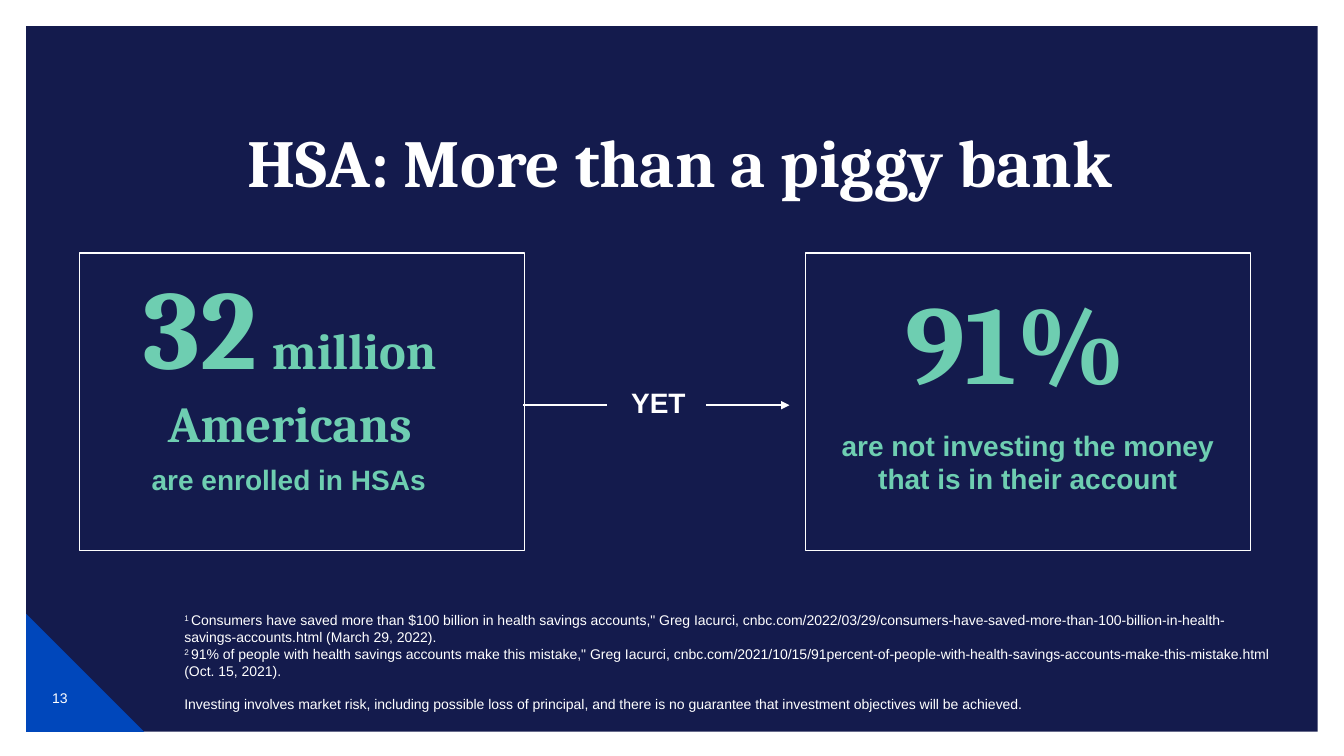
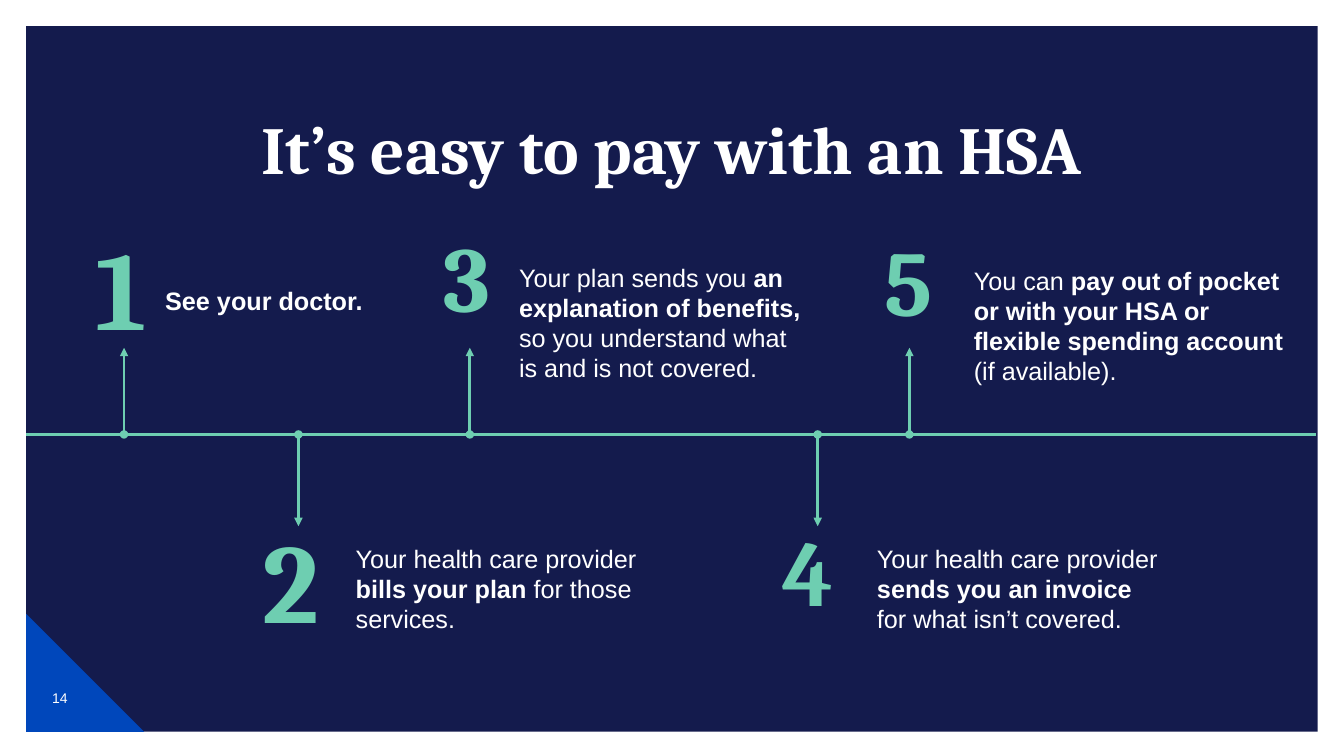
from lxml import etree
from pptx import Presentation
from pptx.dml.color import RGBColor
from pptx.enum.shapes import MSO_CONNECTOR, MSO_SHAPE
from pptx.enum.text import MSO_ANCHOR, MSO_AUTO_SIZE, PP_ALIGN
from pptx.oxml.ns import qn
from pptx.util import Emu, Pt

RECTANGLE, TRIANGLE = MSO_SHAPE.RECTANGLE, MSO_SHAPE.RIGHT_TRIANGLE
STRAIGHT = MSO_CONNECTOR.STRAIGHT
LEFT, CENTER = PP_ALIGN.LEFT, PP_ALIGN.CENTER
TOP, MIDDLE = MSO_ANCHOR.TOP, MSO_ANCHOR.MIDDLE
NO_AUTOFIT = MSO_AUTO_SIZE.NONE

NAVY = RGBColor(0x14, 0x1B, 0x4D)
BLUE = RGBColor(0x00, 0x47, 0xBB)
MINT = RGBColor(0x6E, 0xCE, 0xB1)
WHITE = RGBColor(0xFF, 0xFF, 0xFF)

EMU_PER_PX = 9144  # 100 px to the inch
TITLE_ONLY = 5


def text_format(name, size, color, bold=False):
    return {"name": name, "size": Pt(size), "bold": bold, "color": color}


TITLE = text_format("Cambria", 48, WHITE, True)
FIGURE = text_format("Cambria", 80, MINT, True)
UNIT = text_format("Cambria", 36, MINT, True)
CAPTION = text_format("Arial", 20, MINT, True)
LINK_WORD = text_format("Arial", 20, WHITE, True)
BODY = text_format("Arial", 18, WHITE)
STRONG = text_format("Arial", 18, WHITE, True)
SMALL = text_format("Arial", 10, WHITE)
NOTE_MARK = {**SMALL, "baseline": "30000"}

NOTES = [
    ("1 ", 'Consumers have saved more than $100 billion in health savings accounts," Greg Iacurci, '
     "cnbc.com/2022/03/29/consumers-have-saved-more-than-100-billion-in-health-savings-accounts.html "
     "(March 29, 2022)."),
    ("2 ", '91% of people with health savings accounts make this mistake," Greg Iacurci, '
     "cnbc.com/2021/10/15/91percent-of-people-with-health-savings-accounts-make-this-mistake.html "
     "(Oct. 15, 2021)."),
]
RISK_NOTE = ("Investing involves market risk, including possible loss of principal, and there is "
             "no guarantee that investment objectives will be achieved.")

AXIS_Y, UPPER_Y, LOWER_Y = 431, 345, 522
# number size, number left and top, marker x, arrow end, text box, text spans
STEPS = [
    (80, (85, 227), 123, UPPER_Y, (154, 278, 300, 40), [("See your doctor.", STRONG)]),
    (80, (251, 518), 296, LOWER_Y, (343, 534, 310, 101),
     [("Your health care provider ", BODY), ("bills your plan ", STRONG),
      ("for those services.", BODY)]),
    (66, (430, 226), 466, UPPER_Y, (505, 255, 310, 131),
     [("Your plan sends you ", BODY), ("an explanation of benefits,", STRONG), ("\n", BODY),
      ("so you understand what is and is not covered.", BODY)]),
    (66, (766, 518), 811, LOWER_Y, (860, 534, 310, 101),
     [("Your health care provider ", BODY), ("sends you an invoice", STRONG), ("\n", BODY),
      ("for what isn’t covered.", BODY)]),
    (66, (867, 230), 902, UPPER_Y, (956, 258, 329, 131),
     [("You can ", BODY),
      ("pay out of pocket or with your HSA or flexible spending account", STRONG),
      (" (if available).", BODY)]),
]


def px(*lengths):
    return [Emu(length * EMU_PER_PX) for length in lengths]


def add_spans(para, spans):
    for text, style in spans:
        if text == "\n":
            para.add_line_break()
            continue
        run = para.add_run()
        run.text = text
        for key, value in style.items():
            if key == "color":
                run.font.color.rgb = value
            elif key == "baseline":
                run._r.get_or_add_rPr().set(key, value)
            else:
                setattr(run.font, key, value)


def add_text(slide, place, paragraphs, align=LEFT, anchor=TOP, spacing=1.0):
    frame = slide.shapes.add_textbox(*px(*place)).text_frame
    frame.word_wrap = True
    frame.vertical_anchor = anchor
    for index, spans in enumerate(paragraphs):
        para = frame.add_paragraph() if index else frame.paragraphs[0]
        para.alignment = align
        para.line_spacing = spacing
        add_spans(para, spans)
    return frame


def add_shape(slide, kind, place, fill=None, outline=None):
    shape = slide.shapes.add_shape(kind, *px(*place))
    shape.shadow.inherit = False
    if fill is None:
        shape.fill.background()
    else:
        shape.fill.solid()
        shape.fill.fore_color.rgb = fill
    if outline is None:
        shape.line.fill.background()
    else:
        shape.line.color.rgb = outline
        shape.line.width = Pt(1)
    return shape


def add_line(slide, start, end, color, width, head=None, tail=None):
    connector = slide.shapes.add_connector(STRAIGHT, *px(*start, *end))
    connector.line.color.rgb = color
    connector.line.width = Pt(width)
    properties = connector.element.spPr
    outline = properties.find(qn("a:ln"))
    for tag, kind in (("a:headEnd", head), ("a:tailEnd", tail)):
        if kind:
            etree.SubElement(outline, qn(tag)).set("type", kind)
    etree.SubElement(properties, qn("a:effectLst"))


def move_backdrop_to_layout(slide):
    """Draw the shared panel and corner, then hand them to the layout."""
    panel = add_shape(slide, RECTANGLE, (26, 26, 1281, 700), NAVY)
    corner = add_shape(slide, TRIANGLE, (26, 609, 117, 117), BLUE)
    tree = slide.slide_layout.placeholders[0].element.getparent()
    for index, shape in enumerate((panel, corner), start=2):
        tree.insert(index, shape.element)


def add_slide(deck, number, title, place):
    slide = deck.slides.add_slide(deck.slide_layouts[TITLE_ONLY])
    heading = slide.shapes.title
    heading.left, heading.top, heading.width, heading.height = px(*place)
    frame = heading.text_frame
    for key, value in {"margin_left": 0, "margin_right": 0, "word_wrap": True,
                       "vertical_anchor": TOP, "auto_size": NO_AUTOFIT}.items():
        setattr(frame, key, value)
    para = frame.paragraphs[0]
    para.alignment = CENTER
    para.line_spacing = 0.9
    add_spans(para, [(title, TITLE)])
    add_text(slide, (32, 663, 55, 58), [[(str(number), SMALL)]], CENTER, MIDDLE)
    return slide


def fill_piggy_bank(slide):
    # Framed figures
    for left in (79, 799):
        add_shape(slide, RECTANGLE, (left, 251, 441, 295), outline=WHITE)
    gap = (" ", {**UNIT, "size": Pt(48)})
    for place, spans in (
        ((79, 251, 417, 205), [("32", FIGURE), gap, ("million Americans", UNIT)]),
        ((78, 454, 417, 44), [("are enrolled in HSAs", CAPTION)]),
        ((603, 378, 100, 44), [("YET", LINK_WORD)]),
        ((799, 265, 417, 145), [("91%", FIGURE)]),
        ((811, 420, 417, 77), [("are not investing the money that is in their account", CAPTION)]),
    ):
        add_text(slide, place, [spans], CENTER)

    # Link between the frames
    add_line(slide, (519, 402), (602, 402), WHITE, 1)
    add_line(slide, (700, 402), (783, 402), WHITE, 1, tail="triangle")

    # Footnotes
    notes = [[(mark, NOTE_MARK), (text, SMALL)] for mark, text in NOTES]
    frame = add_text(slide, (173, 602, 1100, 111), notes + [[(RISK_NOTE, SMALL)]])
    frame.paragraphs[-1].space_before = Pt(12)


def fill_timeline(slide):
    add_line(slide, (26, AXIS_Y), (1305, AXIS_Y), MINT, 2)
    for number, (size, corner, x, arrow_y, place, spans) in enumerate(STEPS, start=1):
        style = {**FIGURE, "size": Pt(size)}
        add_text(slide, (*corner, 131, 104), [[(str(number), style)]], spacing=0.9)
        add_text(slide, place, [spans])
        add_line(slide, (x, AXIS_Y), (x, arrow_y), MINT, 2, "oval", "triangle")


def main():
    deck = Presentation()
    deck.slide_width, deck.slide_height = px(1333, 750)
    piggy_bank = add_slide(deck, 13, "HSA: More than a piggy bank", (104, 123, 1140, 65))
    move_backdrop_to_layout(piggy_bank)
    fill_piggy_bank(piggy_bank)
    timeline = add_slide(deck, 14, "It’s easy to pay with an HSA", (163, 111, 1006, 65))
    fill_timeline(timeline)
    deck.save("out.pptx")


if __name__ == "__main__":
    main()
